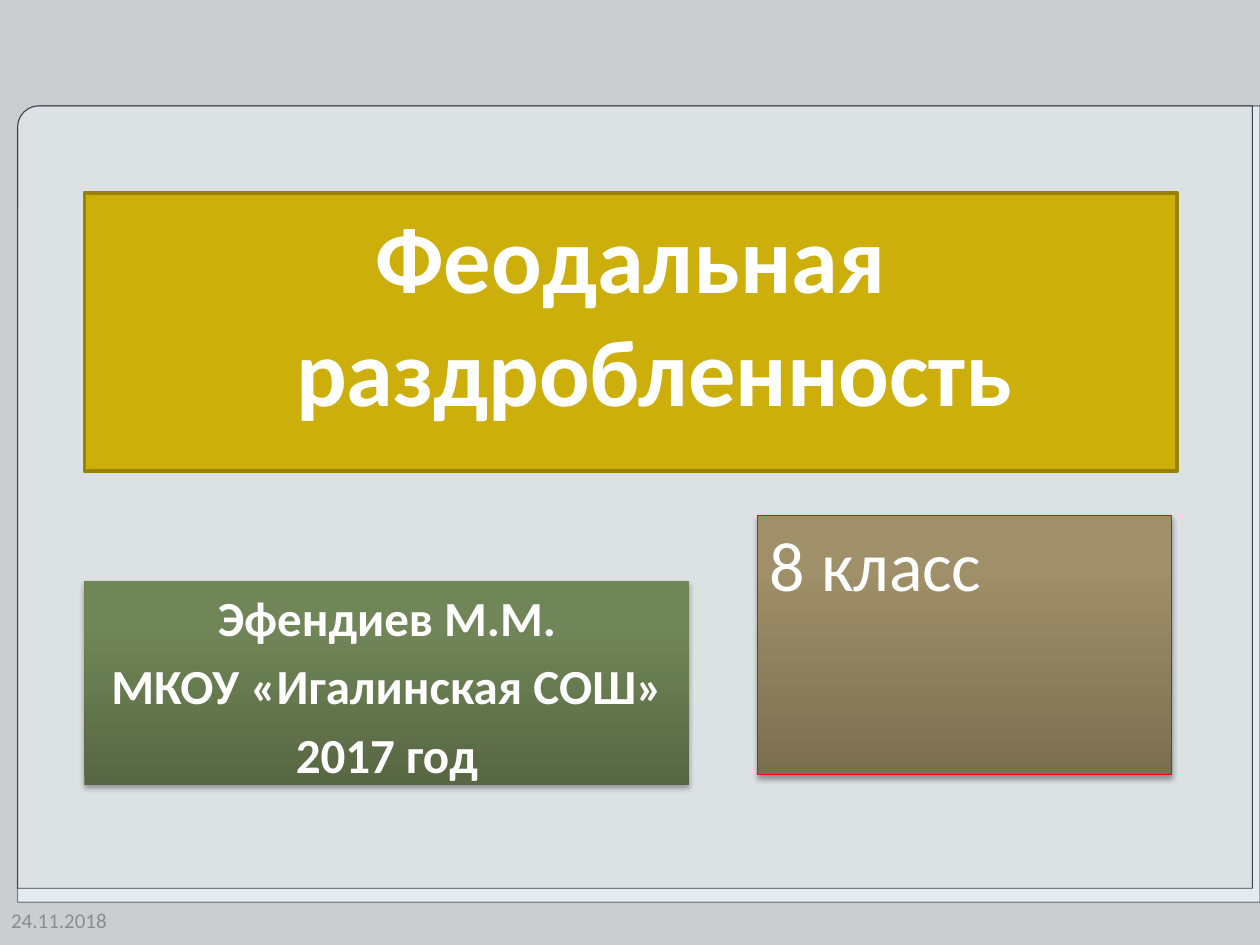
from lxml.etree import SubElement
from pptx import Presentation
from pptx.dml.color import RGBColor
from pptx.enum.shapes import MSO_SHAPE as Shape
from pptx.enum.text import MSO_ANCHOR as Anchor, MSO_AUTO_SIZE as AutoSize, PP_ALIGN as Align
from pptx.oxml import parse_xml
from pptx.oxml.ns import nsdecls, qn
from pptx.util import Inches, Pt

SHADOW = (
    f'<a:effectLst {nsdecls("a")}>'
    '<a:outerShdw blurRad="40000" dist="23000" dir="5400000" rotWithShape="0">'
    '<a:srgbClr val="000000"><a:alpha val="35000"/></a:srgbClr>'
    '</a:outerShdw></a:effectLst>'
)


def paint(color_format, color):
    color_format.rgb = RGBColor.from_string(color)


def format_text(box, size, color, bold=False):
    for para in box.text_frame.paragraphs:
        for span in para.runs:
            span.font.name = "Calibri"
            span.font.size = Pt(size)
            span.font.bold = bold
            paint(span.font.color, color)


deck = Presentation()
deck.slide_width, deck.slide_height = Inches(10), Inches(7.5)
page = deck.slides.add_slide(deck.slide_layouts[3])
page.background.fill.solid()
paint(page.background.fill.fore_color, "CBCED1")

# Two stacked sheets with a rounded top left corner, behind the text
sheets = [
    (9.86, 6.32, "E2ECEF", 100, "7E848D", 0.75),
    (9.8, 6.21, "D8D8D8", 50, "3F4247", 0.5),
]
for order, (width, height, fill, opacity, edge, weight) in enumerate(sheets):
    sheet = page.shapes.add_shape(
        Shape.ROUND_1_RECTANGLE, Inches(0.14), Inches(0.84), Inches(width), Inches(height))
    sheet.adjustments[0] = 0.027
    sheet.shadow.inherit = False
    sheet.fill.solid()
    paint(sheet.fill.fore_color, fill)
    tint = sheet.element.spPr.find(f"{qn('a:solidFill')}/{qn('a:srgbClr')}")
    SubElement(tint, qn("a:alpha"), val=str(opacity * 1000))
    paint(sheet.line.color, edge)
    sheet.line.width = Pt(weight)
    sheet.element.spPr.xfrm.set("flipH", "1")
    page.shapes.element.insert(2 + order, sheet.element)

# Placeholder, position, text, size, bold, alignment, fill colours, line
title, author, grade = page.placeholders
cards = [
    (title, (0.67, 1.53, 8.67, 2.21), "Феодальная раздробленность",
     54, True, Align.CENTER, ["CCAF0A"], ("978107", 2)),
    (author, (0.67, 4.61, 4.8, 1.62), "Эфендиев М.М.\nМКОУ «Игалинская СОШ»\n2017 год",
     28, True, Align.CENTER, ["576743", "718658"], None),
    (grade, (6.01, 4.09, 3.29, 2.06), "8 класс",
     40, False, Align.LEFT, ["7B6F51", "9F9069"], ("FF0000", 0.75)),
]
for box, place, text, size, bold, align, colors, edge in cards:
    box.left, box.top, box.width, box.height = map(Inches, place)
    frame = box.text_frame
    frame.text = text
    frame.word_wrap = True
    frame.auto_size = AutoSize.NONE
    frame.vertical_anchor = Anchor.TOP
    for para in frame.paragraphs:
        para.alignment = align
        para.space_before = Pt(size * 0.2)
        properties = para._p.get_or_add_pPr()
        properties.set("marL", str(Inches(0.38)))
        properties.set("indent", str(Inches(-0.38)))
        SubElement(properties, qn("a:buNone"))
    format_text(box, size, "FFFFFF", bold)

    if len(colors) == 1:
        box.fill.solid()
        paint(box.fill.fore_color, colors[0])
    else:
        box.fill.gradient()
        box.fill.gradient_angle = 90
        for stop, color, position in zip(box.fill.gradient_stops, colors, (0, 0.8)):
            paint(stop.color, color)
            stop.position = position
    if edge:
        paint(box.line.color, edge[0])
        box.line.width = Pt(edge[1])
    else:
        box.line.fill.background()
    if len(colors) > 1:
        box.element.spPr.append(parse_xml(SHADOW))

date = page.shapes.add_textbox(Inches(-0.01), Inches(7.1), Inches(1.17), Inches(0.4))
date.text_frame.text = "24.11.2018"
date.text_frame.word_wrap = True
date.text_frame.vertical_anchor = Anchor.MIDDLE
format_text(date, 12, "8C8C8C")

deck.save("out.pptx")
